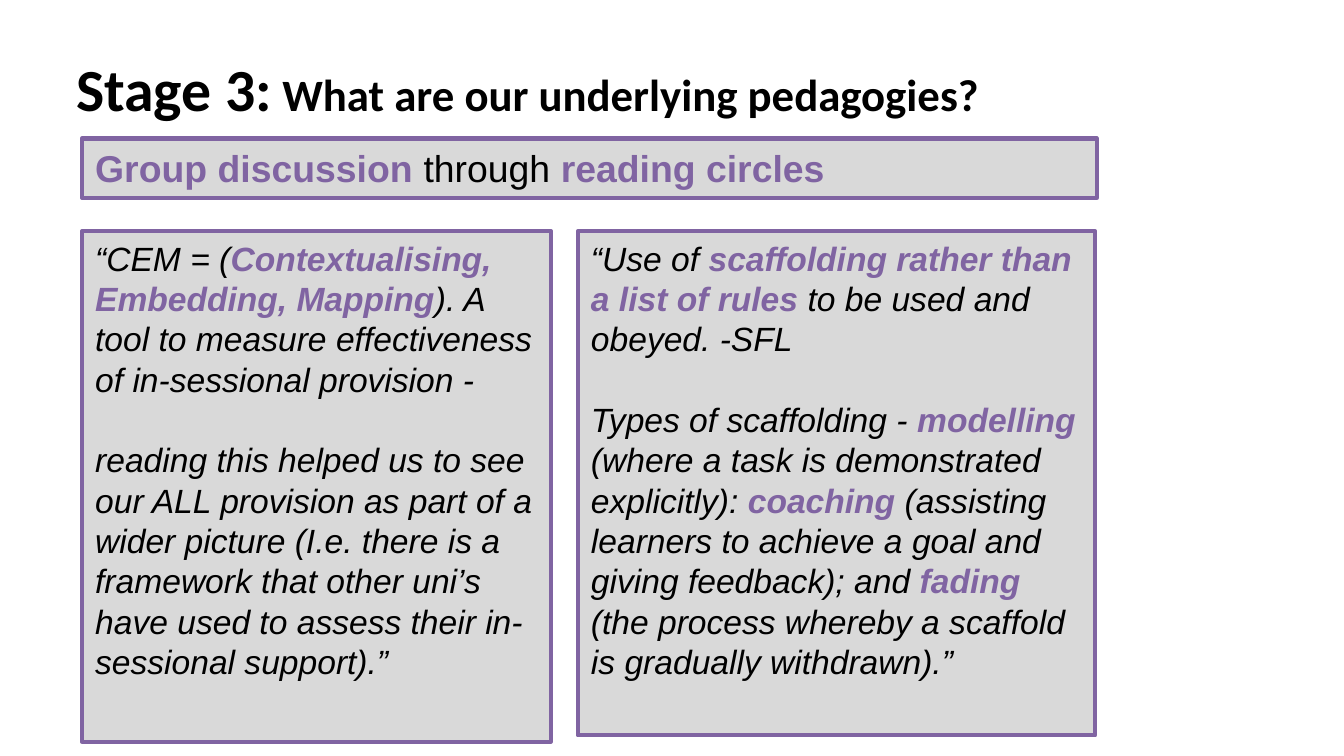
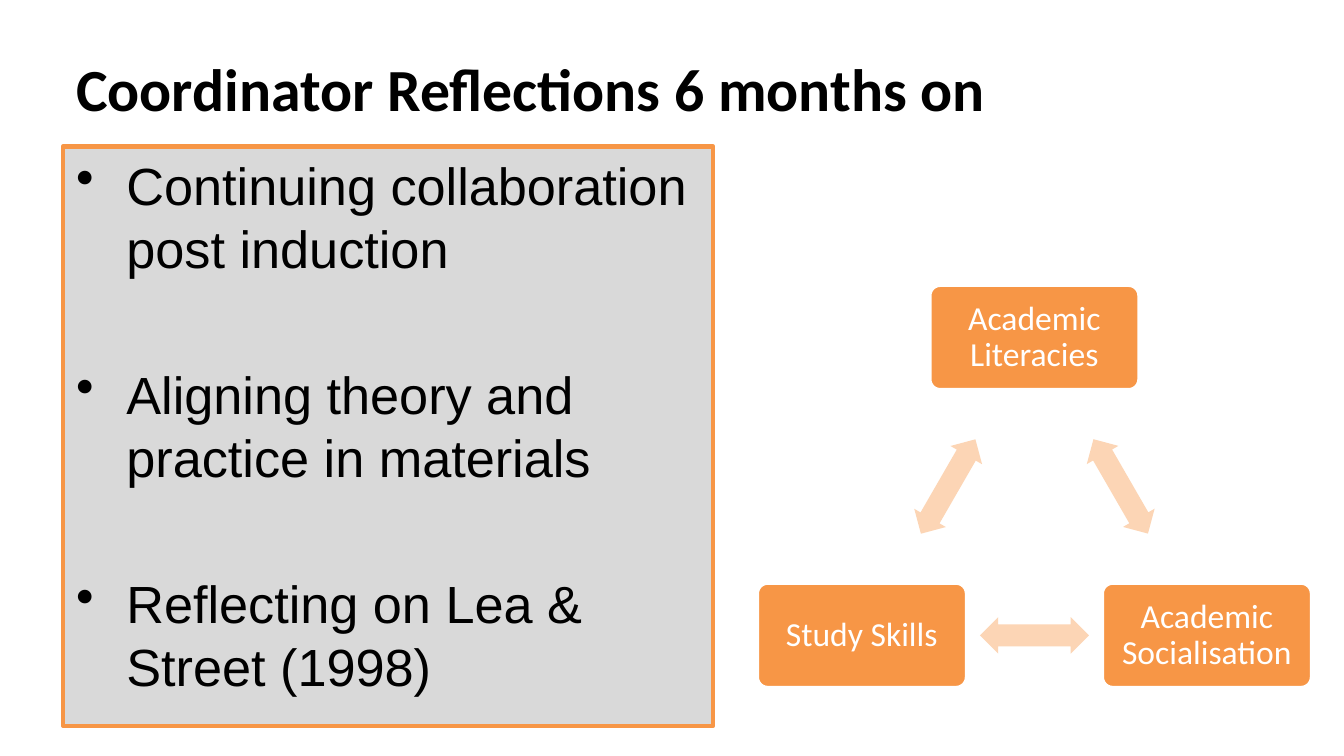
import pptx
import pptx.util
import pptx.dml.color
import pptx.enum.shapes
import pptx.enum.text
import lxml.etree
import pptx.oxml.ns

Cm, Pt = pptx.util.Cm, pptx.util.Pt
RGB = pptx.dml.color.RGBColor
KIND = pptx.enum.shapes.MSO_SHAPE
ANCHOR = pptx.enum.text.MSO_ANCHOR
ALIGN = pptx.enum.text.PP_ALIGN

BLACK = RGB(0x00, 0x00, 0x00)
WHITE = RGB(0xFF, 0xFF, 0xFF)
GREY = RGB(0xD9, 0xD9, 0xD9)
PURPLE = RGB(0x80, 0x64, 0xA2)
ORANGE = RGB(0xF7, 0x96, 0x46)
PEACH = RGB(0xFC, 0xD5, 0xB5)


def draw(slide, kind, x, y, w, h, fill, line=None, weight=2.25):
    """Add a flat shape, sized in centimetres, with text at its top."""
    shape = slide.shapes.add_shape(kind, Cm(x), Cm(y), Cm(w), Cm(h))
    shape.shadow.inherit = False
    shape.fill.solid()
    shape.fill.fore_color.rgb = fill
    if line is None:
        shape.line.fill.background()
    else:
        shape.line.color.rgb = line
        shape.line.width = Pt(weight)
    shape.text_frame.word_wrap = True
    shape.text_frame.vertical_anchor = ANCHOR.TOP
    return shape


def write(frame, texts, size, font="Arial", color=BLACK, gap=0,
          align=ALIGN.LEFT, italic=None, bullet=False):
    """Fill a frame with paragraphs; words between asterisks are bold purple."""
    for i, text in enumerate(texts):
        par = frame.add_paragraph() if i else frame.paragraphs[0]
        par.alignment = align
        if i:
            par.space_before = Pt(gap)
        if bullet:
            props = par._p.get_or_add_pPr()
            props.set("marL", str(Cm(0.95)))
            props.set("indent", str(-Cm(0.95)))
            mark = lxml.etree.SubElement(props, pptx.oxml.ns.qn("a:buChar"))
            mark.set("char", "•")
        par.font.name = font
        par.font.size = Pt(size)
        par.font.italic = italic
        par.font.color.rgb = color
        for k, part in enumerate(text.split("*")):
            if part:
                run = par.add_run()
                run.text = part
                if k % 2:
                    run.font.bold = True
                    run.font.color.rgb = PURPLE


deck = pptx.Presentation()
deck.slide_width, deck.slide_height = Cm(25.4), Cm(14.29)

# Slides and titles: a large part, then an optional smaller part
titles = [
    ("Stage 3:", " What are our underlying pedagogies?"),
    ("Coordinator Reflections 6 months on",),
]
slides = []
for parts in titles:
    slide = deck.slides.add_slide(deck.slide_layouts[6])
    slides.append(slide)
    box = slide.shapes.add_textbox(Cm(1.19), Cm(0.86), Cm(21.5), Cm(2.72))
    box.text_frame.word_wrap = True
    par = box.text_frame.paragraphs[0]
    par.font.name = "Calibri"
    par.font.bold = True
    par.font.color.rgb = BLACK
    for part, size in zip(parts, (32, 24)):
        run = par.add_run()
        run.text = part
        run.font.size = Pt(size)
stage, review = slides

# Stage 3: heading bar
bar = draw(stage, KIND.RECTANGLE, 1.55, 2.62, 19.18, 1.12, GREY, PURPLE)
write(bar.text_frame, ["*Group discussion *through *reading circles*"], 20)

# Stage 3: two quotes
quotes = [
    (1.55, 8.86, 9.65, [
        "“CEM = (*Contextualising, Embedding, Mapping*). A tool to measure "
        "effectiveness of in-sessional provision -",
        "reading this helped us to see our ALL provision as part of a wider "
        "picture (I.e. there is a framework that other uni’s have used to "
        "assess their in-sessional support).”",
    ]),
    (10.92, 9.78, 9.53, [
        "“Use of* scaffolding rather than a list of rules *to be used and "
        "obeyed. -SFL",
        "Types of scaffolding - *modelling* (where a task is demonstrated "
        "explicitly): *coaching* (assisting learners to achieve a goal and "
        "giving feedback); and *fading* (the process whereby a scaffold is "
        "gradually withdrawn).”",
    ]),
]
for x, w, h, texts in quotes:
    card = draw(stage, KIND.RECTANGLE, x, 4.37, w, h, GREY, PURPLE)
    write(card.text_frame, texts, 18, gap=21.6, italic=True)

# Reflections: bullet list
panel = draw(review, KIND.RECTANGLE, 1.19, 2.77, 12.29, 10.95, GREY, ORANGE)
write(panel.text_frame, [
    "Continuing collaboration post induction",
    "Aligning theory and practice in materials",
    "Reflecting on Lea & Street (1998)",
], 28, gap=44.8, bullet=True)

# Reflections: cycle of three nodes, with an arrow midway to the next node
nodes = [
    ("Academic Literacies", 19.55, 6.38),
    ("Academic Socialisation", 22.81, 12.01),
    ("Study Skills", 16.29, 12.01),
]
wide, high = 3.96, 1.98
long, thick = 2.06, 0.69
for i, (name, x, y) in enumerate(nodes):
    node = draw(review, KIND.ROUNDED_RECTANGLE, x - wide / 2, y - high / 2,
                wide, high, ORANGE, WHITE, 2)
    node.adjustments[0] = 0.1
    frame = node.text_frame
    frame.vertical_anchor = ANCHOR.MIDDLE
    frame.margin_left = frame.margin_right = Cm(0.23)
    frame.margin_top = frame.margin_bottom = Cm(0.23)
    write(frame, [name], 18, "Calibri", WHITE, align=ALIGN.CENTER)
    frame.paragraphs[0].line_spacing = 0.9

    _, x2, y2 = nodes[(i + 1) % 3]
    arrow = draw(review, KIND.LEFT_RIGHT_ARROW, (x + x2 - long) / 2,
                 (y + y2 - thick) / 2, long, thick, PEACH)
    arrow.adjustments[0] = 0.6
    arrow.adjustments[1] = 0.5
    arrow.rotation = 60 + 120 * i

deck.save("out.pptx")
